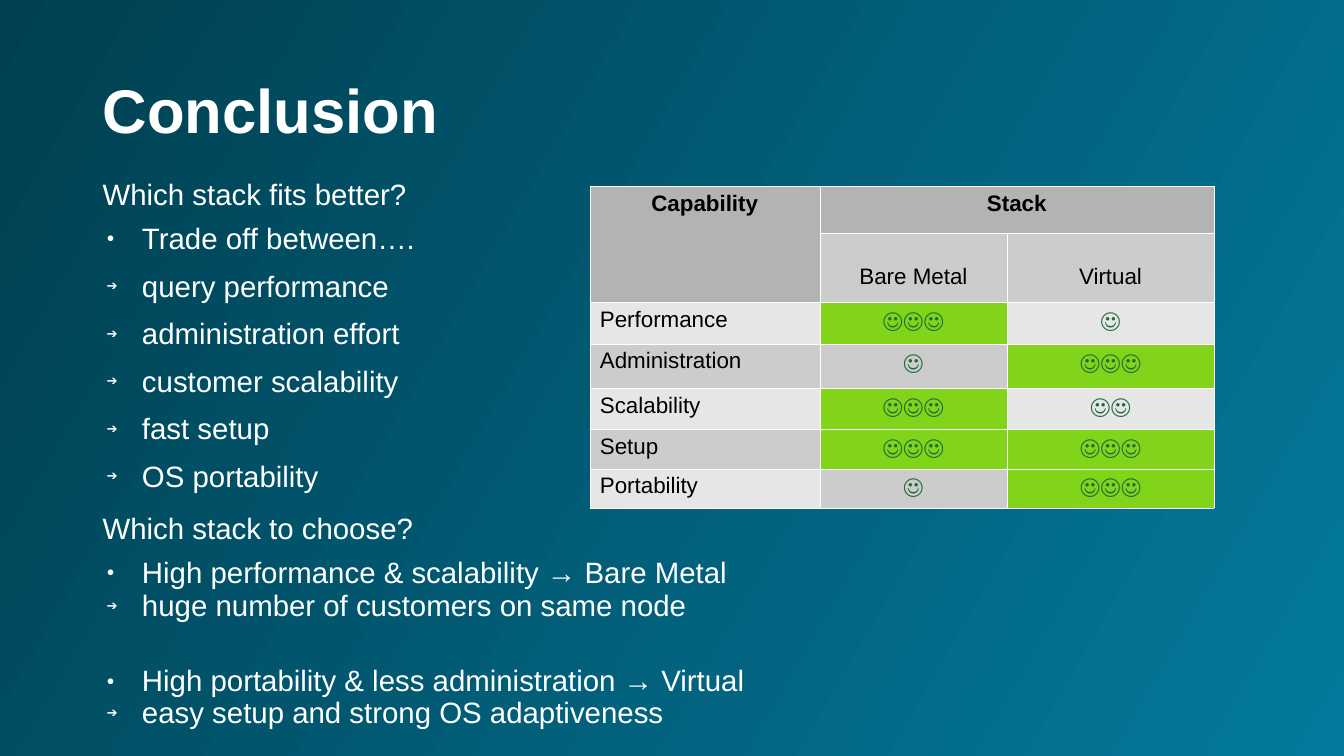
"""Build the conclusion slide that compares the two stacks."""
from dataclasses import dataclass
from lxml import etree
from pptx import Presentation
from pptx import util as u
from pptx.dml import color
from pptx.enum import text as t
from pptx.oxml import ns

WHITE, BLACK, PINE, GREEN = "FFFFFF", "000000", "1E6A39", "81D41A"
DARK, MID, PALE = "B3B3B3", "CCCCCC", "E6E6E6"
DOT, ARROW = "●", "➔"


@dataclass
class Line:
    text: str
    mark: str = ""
    gap: float = 0


@dataclass
class Trait:
    name: str
    bare: int
    virtual: int
    high: float


LINES = [
    Line("Which stack fits better?"),
    Line("Trade off between….", DOT, 8.7),
    *(Line(goal, ARROW, 11.3) for goal in (
        "query performance", "administration effort", "customer scalability",
        "fast setup", "OS portability")),
    Line("Which stack to choose?", gap=14.2),
    Line("High performance & scalability → Bare Metal", DOT, 8.7),
    Line("huge number of customers on same node", ARROW, 1.4),
    Line("High portability & less administration → Virtual", DOT, 31),
    Line("easy setup and strong OS adaptiveness", ARROW),
]
TRAITS = [
    Trait("Performance", 3, 1, 0.41),
    Trait("Administration", 1, 3, 0.44),
    Trait("Scalability", 3, 2, 0.41),
    Trait("Setup", 3, 3, 0.39),
    Trait("Portability", 1, 3, 0.39),
]


def rgb(code: str) -> color.RGBColor:
    return color.RGBColor.from_string(code)


def add(parent, tag: str, **attrs: str):
    return etree.SubElement(parent, ns.qn(tag), **attrs)


def write(para, words: str, *, size: float, tint: str = WHITE, bold: bool = False,
          face: str = "Arial", align=t.PP_ALIGN.LEFT) -> None:
    para.alignment = align
    run = para.add_run()
    run.text = words
    font = run.font
    font.size, font.bold, font.name = u.Pt(size), bold, face
    font.color.rgb = rgb(tint)


def mark(para, sign: str) -> None:
    props = para._p.get_or_add_pPr()
    props.set("marL", str(u.Inches(0.39)))
    props.set("indent", str(u.Inches(-0.35)))
    add(add(props, "a:buClr"), "a:srgbClr", val=WHITE)
    add(props, "a:buSzPct", val="45000")
    add(props, "a:buFont", typeface="Arial")
    add(props, "a:buChar", char=sign)
    para.level = int(sign == ARROW)


def box(slide, left: float, top: float, width: float, height: float):
    frame = slide.shapes.add_textbox(*map(u.Inches, (left, top, width, height))).text_frame
    frame.word_wrap = True
    return frame


def fill(cell, words: str, shade: str, **style) -> None:
    props = cell._tc.get_or_add_tcPr()
    for side in ("a:lnL", "a:lnR", "a:lnT", "a:lnB"):
        edge = add(props, side, w=str(u.Pt(0.06)))
        add(add(edge, "a:solidFill"), "a:srgbClr", val=WHITE)
    cell.fill.solid()
    cell.fill.fore_color.rgb = rgb(shade)
    if words:
        write(cell.text_frame.paragraphs[0], words, size=16, **style)


def table(slide) -> None:
    highs = [0.46, 0.69, *(trait.high for trait in TRAITS)]
    wides = [2.28, 1.86, 2.05]
    grid = slide.shapes.add_table(len(highs), len(wides), u.Inches(5.85), u.Inches(1.85),
                                  u.Inches(sum(wides)), u.Inches(sum(highs))).table
    grid.first_row = grid.horz_banding = False
    for col, wide in zip(grid.columns, wides):
        col.width = u.Inches(wide)
    for row, high in zip(grid.rows, highs):
        row.height = u.Inches(high)

    mid = t.PP_ALIGN.CENTER
    for col, words in enumerate(("Capability", "Stack", "")):
        fill(grid.cell(0, col), words, DARK, tint=BLACK, bold=True, align=mid)
    fill(grid.cell(1, 0), "", DARK)
    for col, words in enumerate(("Bare Metal", "Virtual"), 1):
        fill(grid.cell(1, col), words, MID, tint=BLACK, align=mid)
        grid.cell(1, col).margin_top = u.Inches(0.31)
    grid.cell(0, 0).merge(grid.cell(1, 0))
    grid.cell(0, 1).merge(grid.cell(0, 2))

    for row, trait in enumerate(TRAITS, 2):
        fill(grid.cell(row, 0), trait.name, MID if row % 2 else PALE, tint=BLACK)
        for col, score, plain in ((1, trait.bare, MID), (2, trait.virtual, PALE)):
            fill(grid.cell(row, col), "☺" * score, GREEN if score == 3 else plain,
                 tint=PINE, bold=True, face="Calibri", align=mid)


def main() -> None:
    deck = Presentation()
    deck.slide_width, deck.slide_height = u.Inches(13.33), u.Inches(7.5)
    slide = deck.slides.add_slide(deck.slide_layouts[6])
    back = slide.background.fill
    back.gradient()
    back.gradient_angle = 150
    for stop, code in zip(back.gradient_stops, ("037A9D", "003F50")):
        stop.color.rgb = rgb(code)

    title = box(slide, 0.92, 0.4, 9.54, 1.45)
    title.vertical_anchor = t.MSO_ANCHOR.MIDDLE
    title.paragraphs[0].line_spacing = 0.9
    write(title.paragraphs[0], "Conclusion", size=44, bold=True)

    body = box(slide, 0.92, 1.74, 11.5, 6.26)
    for pos, line in enumerate(LINES):
        para = body.add_paragraph() if pos else body.paragraphs[0]
        if line.mark:
            mark(para, line.mark)
        para.line_spacing = 0.9
        para.space_before = u.Pt(line.gap)
        write(para, line.text, size=21)
    table(slide)
    deck.save("out.pptx")


if __name__ == "__main__":
    main()
